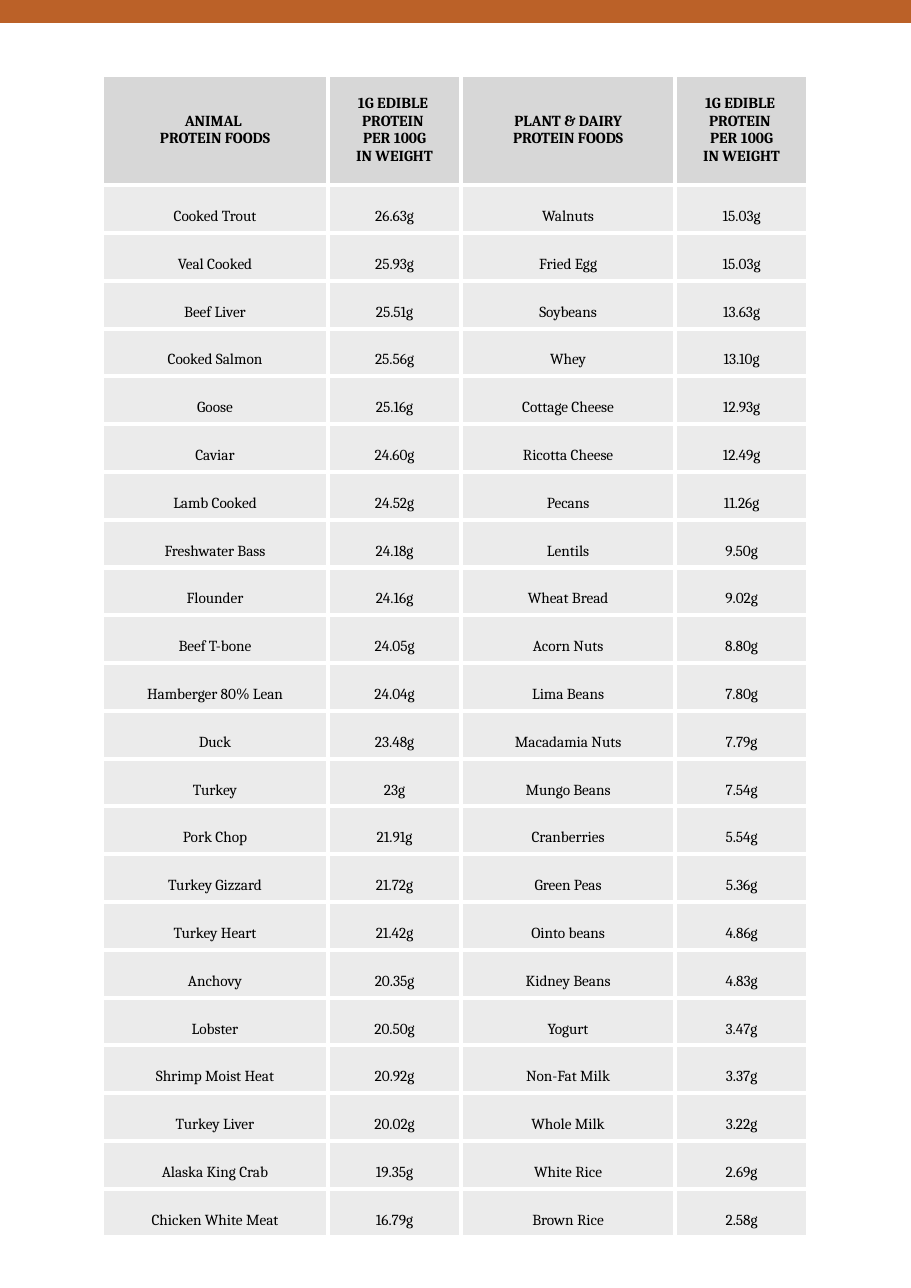
from dataclasses import dataclass

from lxml import etree
from pptx import Presentation
from pptx import util as u
from pptx.dml.color import RGBColor
from pptx.enum import shapes, text
from pptx.oxml import ns
from pptx.slide import Slide
from pptx.table import _Cell as Cell

ORANGE = RGBColor(0xBB, 0x61, 0x28)
HEADER_GRAY = RGBColor(0xD7, 0xD7, 0xD7)
BODY_GRAY = RGBColor(0xEB, 0xEB, 0xEB)
WHITE = RGBColor(0xFF, 0xFF, 0xFF)
BLACK = RGBColor(0x00, 0x00, 0x00)

PAGE_WIDTH, PAGE_HEIGHT = u.Cm(21), u.Cm(29.7)
TABLE_LEFT, TABLE_TOP = u.Cm(2.34), u.Cm(1.73)
TABLE_HEIGHT, HEADER_HEIGHT = u.Cm(26.8), u.Cm(2.54)
COLUMN_WIDTHS = [u.Cm(5.23), u.Cm(3.05), u.Cm(4.95), u.Cm(3.05)]
BORDER_WIDTH = u.Pt(3)


@dataclass(frozen=True)
class CellStyle:
    fill: RGBColor
    bold: bool
    anchor: text.MSO_ANCHOR
    line_spacing: float


HEADER_STYLE = CellStyle(HEADER_GRAY, True, text.MSO_ANCHOR.MIDDLE, 1.0)
BODY_STYLE = CellStyle(BODY_GRAY, False, text.MSO_ANCHOR.TOP, 1.97)

AMOUNT_TITLE = "1G EDIBLE \nPROTEIN \nPER 100G\nIN WEIGHT"
HEADERS = ("ANIMAL \nPROTEIN FOODS", AMOUNT_TITLE,
           "PLANT & DAIRY\nPROTEIN FOODS", AMOUNT_TITLE)
FOODS = [
    ("Cooked Trout", "26.63g", "Walnuts", "15.03g"),
    ("Veal Cooked", "25.93g", "Fried Egg", "15.03g"),
    ("Beef Liver", "25.51g", "Soybeans", "13.63g"),
    ("Cooked Salmon", "25.56g", "Whey", "13.10g"),
    ("Goose", "25.16g", "Cottage Cheese", "12.93g"),
    ("Caviar", "24.60g", "Ricotta Cheese", "12.49g"),
    ("Lamb Cooked", "24.52g", "Pecans", "11.26g"),
    ("Freshwater Bass", "24.18g", "Lentils", "9.50g"),
    ("Flounder", "24.16g", "Wheat Bread", "9.02g"),
    ("Beef T-bone", "24.05g", "Acorn Nuts", "8.80g"),
    ("Hamberger 80% Lean", "24.04g", "Lima Beans", "7.80g"),
    ("Duck", "23.48g", "Macadamia Nuts", "7.79g"),
    ("Turkey", "23g", "Mungo Beans", "7.54g"),
    ("Pork Chop", "21.91g", "Cranberries", "5.54g"),
    ("Turkey Gizzard", "21.72g", "Green Peas", "5.36g"),
    ("Turkey Heart", "21.42g", "Ointo beans", "4.86g"),
    ("Anchovy", "20.35g", "Kidney Beans", "4.83g"),
    ("Lobster", "20.50g", "Yogurt", "3.47g"),
    ("Shrimp Moist Heat", "20.92g", "Non-Fat Milk", "3.37g"),
    ("Turkey Liver", "20.02g", "Whole Milk", "3.22g"),
    ("Alaska King Crab", "19.35g", "White Rice", "2.69g"),
    ("Chicken White Meat", "16.79g", "Brown Rice", "2.58g"),
]


def add_top_band(page: Slide) -> None:
    band = page.shapes.add_shape(
        shapes.MSO_SHAPE.RECTANGLE, 0, 0, PAGE_WIDTH, u.Cm(0.53))
    band.shadow.inherit = False
    band.fill.solid()
    band.fill.fore_color.rgb = ORANGE
    band.line.fill.background()


def add_borders(cell: Cell) -> None:
    """Draw all four borders; call before the fill, which must follow them in the XML."""
    properties = cell._tc.get_or_add_tcPr()
    for side in ("a:lnL", "a:lnR", "a:lnT", "a:lnB"):
        line = etree.SubElement(properties, ns.qn(side), w=str(BORDER_WIDTH))
        fill = etree.SubElement(line, ns.qn("a:solidFill"))
        etree.SubElement(fill, ns.qn("a:srgbClr"), val=str(WHITE))


def fill_cell(cell: Cell, content: str, style: CellStyle) -> None:
    add_borders(cell)
    cell.fill.solid()
    cell.fill.fore_color.rgb = style.fill
    cell.vertical_anchor = style.anchor
    frame = cell.text_frame
    for index, line in enumerate(content.split("\n")):
        para = frame.add_paragraph() if index else frame.paragraphs[0]
        para.alignment = text.PP_ALIGN.CENTER
        para.line_spacing = style.line_spacing
        span = para.add_run()
        span.text = line
        span.font.name = "Cambria"
        span.font.size = u.Pt(10)
        span.font.bold = style.bold
        span.font.color.rgb = BLACK


def add_protein_table(page: Slide) -> None:
    rows = [HEADERS, *FOODS]
    table = page.shapes.add_table(
        len(rows), len(COLUMN_WIDTHS), TABLE_LEFT, TABLE_TOP,
        sum(COLUMN_WIDTHS), TABLE_HEIGHT).table
    table.horz_banding = False
    for column, width in zip(table.columns, COLUMN_WIDTHS):
        column.width = width
    food_height = (TABLE_HEIGHT - HEADER_HEIGHT) // len(FOODS)
    for index, (row, contents) in enumerate(zip(table.rows, rows)):
        row.height = food_height if index else HEADER_HEIGHT
        style = BODY_STYLE if index else HEADER_STYLE
        for cell, content in zip(row.cells, contents):
            fill_cell(cell, content, style)


def main() -> None:
    deck = Presentation()
    deck.slide_width, deck.slide_height = PAGE_WIDTH, PAGE_HEIGHT
    page = deck.slides.add_slide(deck.slide_layouts[6])
    add_top_band(page)
    add_protein_table(page)
    deck.save("out.pptx")


if __name__ == "__main__":
    main()
